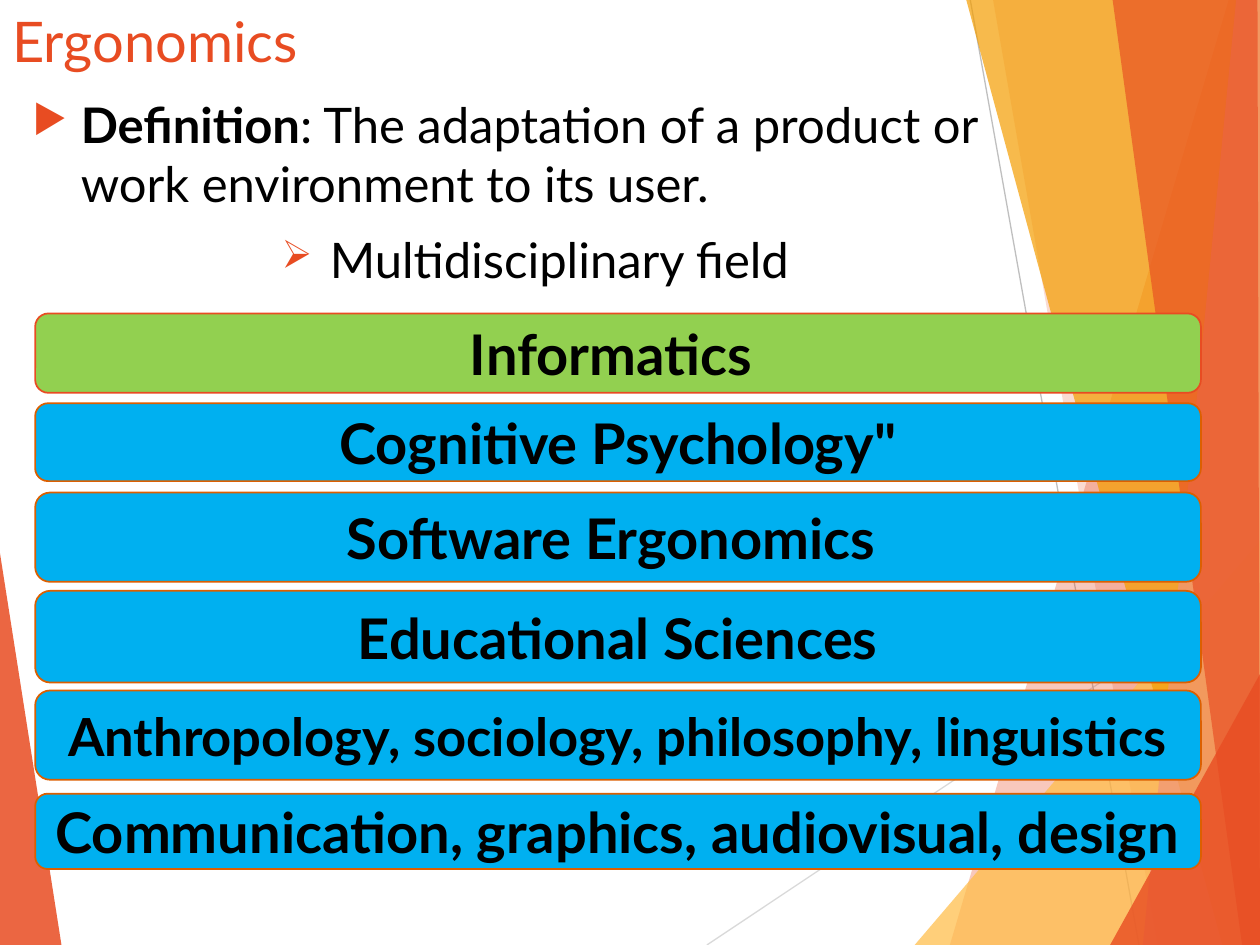
from lxml.etree import SubElement
from pptx import Presentation
from pptx.dml.color import RGBColor
from pptx.enum.shapes import MSO_CONNECTOR as Connector, MSO_SHAPE as Shape
from pptx.enum.text import MSO_ANCHOR as Anchor, PP_ALIGN as Align
from pptx.oxml.ns import qn
from pptx.util import Cm, Pt

WIDTH, HEIGHT = 25.4, 19.05
COLORS = {
    "accent": "E84C22", "gold": "FFBD47", "amber": "F49D00", "salmon": "F1947A",
    "rust": "DC5F00", "green": "92D050", "blue": "00B0F0", "black": "000000",
    "gray": "BFBFBF", "light_gray": "D9D9D9",
}


def rgb(color):
    return RGBColor.from_string(COLORS[color])


def add_text(paragraph, text, font="Lato", size=32, color="black", bold=False):
    run = paragraph.add_run()
    run.text = text
    run.font.name = font
    run.font.size = Pt(size)
    run.font.bold = bold
    run.font.color.rgb = rgb(color)


class ErgonomicsSlide:
    bullet_color = "accent"
    bullet_indent = 0.97

    def __init__(self, presentation):
        self.slide = presentation.slides.add_slide(presentation.slide_layouts[6])
        self.shapes = self.slide.shapes

    def ray(self, start, end, color):
        ray = self.shapes.add_connector(
            Connector.STRAIGHT, *(Cm(value) for value in start + end))
        ray.line.color.rgb = rgb(color)
        ray.line.width = Pt(0.75)
        SubElement(ray._element.spPr, qn("a:effectLst"))

    def facet(self, corners, color, opacity):
        first, *rest = [(Cm(x), Cm(y)) for x, y in corners]
        builder = self.shapes.build_freeform(*first)
        builder.add_line_segments(rest)
        facet = builder.convert_to_shape()
        facet.shadow.inherit = False
        facet.fill.solid()
        facet.fill.fore_color.rgb = rgb(color)
        facet.line.fill.background()
        tint = facet._element.spPr.find(qn("a:solidFill")).find(qn("a:srgbClr"))
        SubElement(tint, qn("a:alpha"), val=str(opacity * 1000))

    def band(self, top, bottom, color, opacity, right=WIDTH):
        self.facet([(top, 0), (bottom, HEIGHT), (WIDTH, HEIGHT), (right, 0)],
                   color, opacity)

    def corner(self, bottom, side, color, opacity):
        self.facet([(bottom, HEIGHT), (WIDTH, side), (WIDTH, HEIGHT)], color, opacity)

    def text_box(self, left, top, width, height):
        frame = self.shapes.add_textbox(
            Cm(left), Cm(top), Cm(width), Cm(height)).text_frame
        frame.word_wrap = True
        return frame

    def bullet(self, paragraph, symbol, margin):
        properties = paragraph._p.get_or_add_pPr()
        properties.set("marL", str(Cm(margin)))
        properties.set("indent", str(-Cm(self.bullet_indent)))
        tint = SubElement(properties, qn("a:buClr"))
        SubElement(tint, qn("a:srgbClr"), val=COLORS[self.bullet_color])
        SubElement(properties, qn("a:buSzPct"), val="80000")
        SubElement(properties, qn("a:buChar"), char=symbol)

    def discipline(self, name, top, height, fill="blue", outline="rust", size=32):
        bar = self.shapes.add_shape(
            Shape.ROUNDED_RECTANGLE, Cm(0.71), Cm(top), Cm(23.5), Cm(height))
        bar.shadow.inherit = False
        bar.fill.solid()
        bar.fill.fore_color.rgb = rgb(fill)
        bar.line.color.rgb = rgb(outline)
        bar.line.width = Pt(1)
        frame = bar.text_frame
        frame.word_wrap = True
        frame.vertical_anchor = Anchor.MIDDLE
        paragraph = frame.paragraphs[0]
        paragraph.alignment = Align.CENTER
        add_text(paragraph, name, size=size, bold=True)


def main():
    presentation = Presentation()
    presentation.slide_width, presentation.slide_height = Cm(WIDTH), Cm(HEIGHT)
    page = ErgonomicsSlide(presentation)

    page.facet([(0, 11.15), (1.24, HEIGHT), (0, HEIGHT)], "accent", 85)
    page.ray((14.25, HEIGHT), (WIDTH, 11.61), "light_gray")
    page.ray((19.56, 0), (22.96, HEIGHT), "gray")
    page.band(24.77, 19.15, "accent", 30)
    page.band(20.02, 23.34, "accent", 20)
    page.corner(18.44, 10.9, "gold", 72)
    page.band(19.48, 24.64, "amber", 70)
    page.band(24.92, 23.04, "salmon", 70)
    page.band(22.43, 25.04, "accent", 65, right=25.35)
    page.corner(22.38, 13.59, "accent", 80)

    title = page.text_box(0, 0, WIDTH, 2.41).paragraphs[0]
    add_text(title, "Ergonomics", color="accent")

    body = page.text_box(0.41, 1.78, 21.11, 4.11)
    definition = body.paragraphs[0]
    page.bullet(definition, "▶", 0.97)
    add_text(definition, "Definition", size=28, bold=True)
    add_text(definition,
             ": The adaptation of a product or work environment to its user.", size=28)
    field = body.add_paragraph()
    page.bullet(field, "➢", 5.99)
    field.space_before = Pt(10)
    add_text(field, "Multidisciplinary field", size=28)

    page.discipline("Informatics ", 6.32, 1.6, fill="green", outline="accent")
    page.discipline('Cognitive Psychology"', 8.13, 1.57)
    page.discipline("Software Ergonomics ", 9.93, 1.8)
    page.discipline("Educational Sciences", 11.91, 1.85)
    page.discipline("Anthropology, sociology, philosophy, linguistics", 13.92, 1.8, size=30)
    page.discipline("Communication, graphics, audiovisual, design", 16, 1.52)

    presentation.save("out.pptx")


if __name__ == "__main__":
    main()
